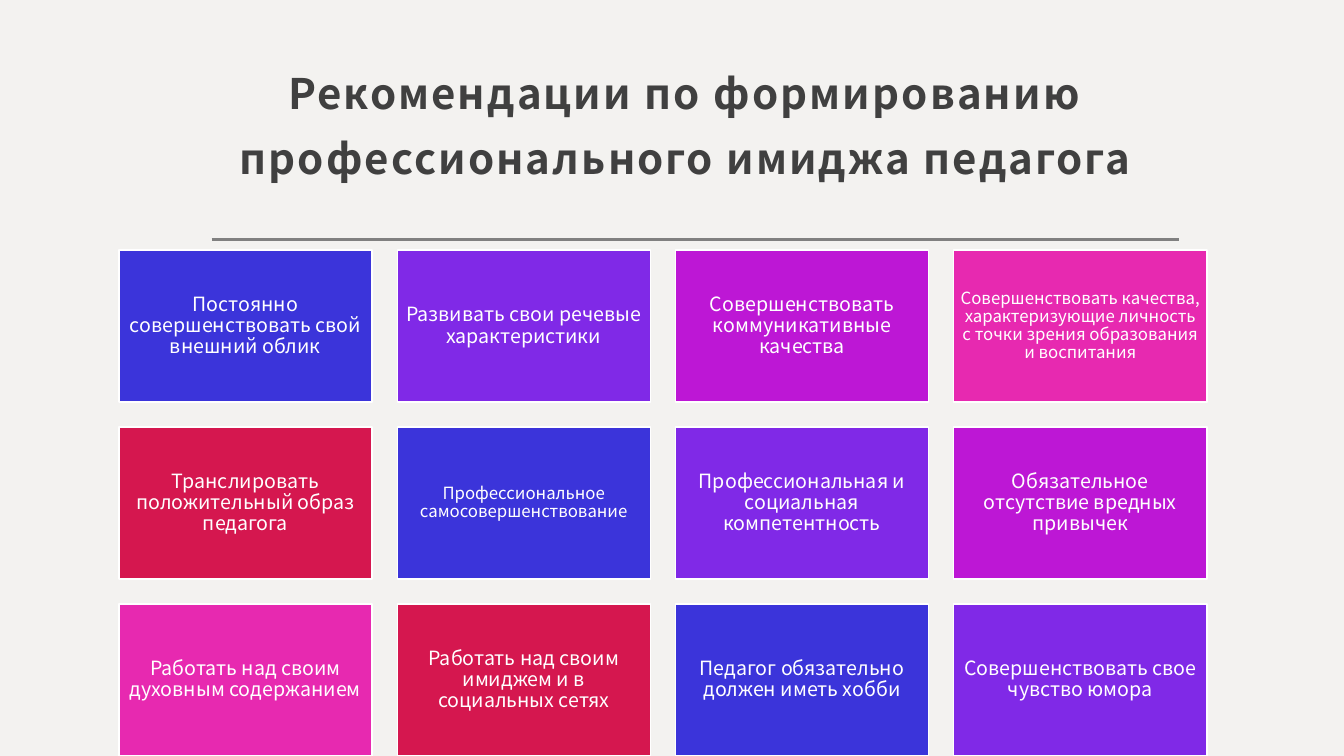
"""Build a slide of twelve recommendations on a teacher's professional image."""
from pptx import Presentation
from pptx import util as u
from pptx.dml.color import RGBColor
from pptx.enum import shapes, text
from pptx.oxml.ns import qn

FONT = "Noto Sans CJK JP"
PALETTE = ["3B34DA", "8029E7", "BD17D5", "E729B0", "D5174F"]
COLUMNS, ROWS = 4, 3
LEFT, TOP, WIDTH, HEIGHT = 1.18, 2.48, 2.51, 1.51
COLUMN_STEP = 2.76
ROW_STEP = (7.5 - HEIGHT - TOP) / (ROWS - 1)
RECOMMENDATIONS = [
    ("Постоянно совершенствовать свой внешний облик", 14),
    ("Развивать свои речевые характеристики", 14),
    ("Совершенствовать коммуникативные качества", 14),
    ("Совершенствовать качества, характеризующие личность с точки зрения образования и воспитания", 12),
    ("Транслировать положительный образ педагога", 14),
    ("Профессиональное самосовершенствование", 12),
    ("Профессиональная и социальная компетентность", 14),
    ("Обязательное отсутствие вредных привычек", 14),
    ("Работать над своим духовным содержанием", 14),
    ("Работать над своим имиджем и в социальных сетях", 14),
    ("Педагог обязательно должен иметь хобби", 14),
    ("Совершенствовать свое чувство юмора", 14),
]


def paint(color_format, value):
    color_format.rgb = RGBColor.from_string(value)


def write(shape, words, size, color, line_spacing, margins, bold=False):
    frame = shape.text_frame
    frame.word_wrap = True
    frame.auto_size = text.MSO_AUTO_SIZE.NONE
    frame.vertical_anchor = text.MSO_ANCHOR.MIDDLE
    for side, margin in margins.items():
        setattr(frame, f"margin_{side}", u.Inches(margin))
    paragraph = frame.paragraphs[0]
    paragraph.alignment = text.PP_ALIGN.CENTER
    paragraph.line_spacing = line_spacing
    run = paragraph.add_run()
    run.text = words
    for name, value in {"name": FONT, "size": u.Pt(size), "bold": bold}.items():
        setattr(run.font, name, value)
    paint(run.font.color, color)
    return run


presentation = Presentation()
presentation.slide_width = u.Inches(13.33)
presentation.slide_height = u.Inches(7.5)
slide = presentation.slides.add_slide(presentation.slide_layouts[5])
slide.background.fill.solid()
paint(slide.background.fill.fore_color, "F3F2F0")

title = slide.shapes.title
for name, value in {"left": 1.84, "top": 0, "width": 9.92, "height": 2.31}.items():
    setattr(title, name, u.Inches(value))
title_run = write(title, "Рекомендации по формированию профессионального имиджа педагога",
                  30, "404040", 1.3,
                  {"left": 0.12, "top": 0.12, "right": 0.12, "bottom": 0.1}, bold=True)
title_run.font._element.set("spc", "150")

rule = slide.shapes.add_connector(shapes.MSO_CONNECTOR.STRAIGHT, u.Inches(2.1),
                                  u.Inches(2.38), u.Inches(11.69), u.Inches(2.38))
rule.line.width = u.Pt(2)
paint(rule.line.color, "808080")
rule_properties = rule._element.spPr
rule_properties.append(rule_properties.makeelement(qn("a:effectLst"), {}))

for index, (words, size) in enumerate(RECOMMENDATIONS):
    row, column = divmod(index, COLUMNS)
    card = slide.shapes.add_shape(
        shapes.MSO_SHAPE.RECTANGLE, u.Inches(LEFT + column * COLUMN_STEP),
        u.Inches(TOP + row * ROW_STEP), u.Inches(WIDTH), u.Inches(HEIGHT))
    card.shadow.inherit = False
    card.fill.solid()
    paint(card.fill.fore_color, PALETTE[index % len(PALETTE)])
    card.line.width = u.Pt(1)
    paint(card.line.color, "FFFFFF")
    margin = 0.06 if size == 14 else 0.05
    write(card, words, size, "FFFFFF", 0.9,
          dict.fromkeys(["left", "top", "right", "bottom"], margin))

presentation.save("out.pptx")
